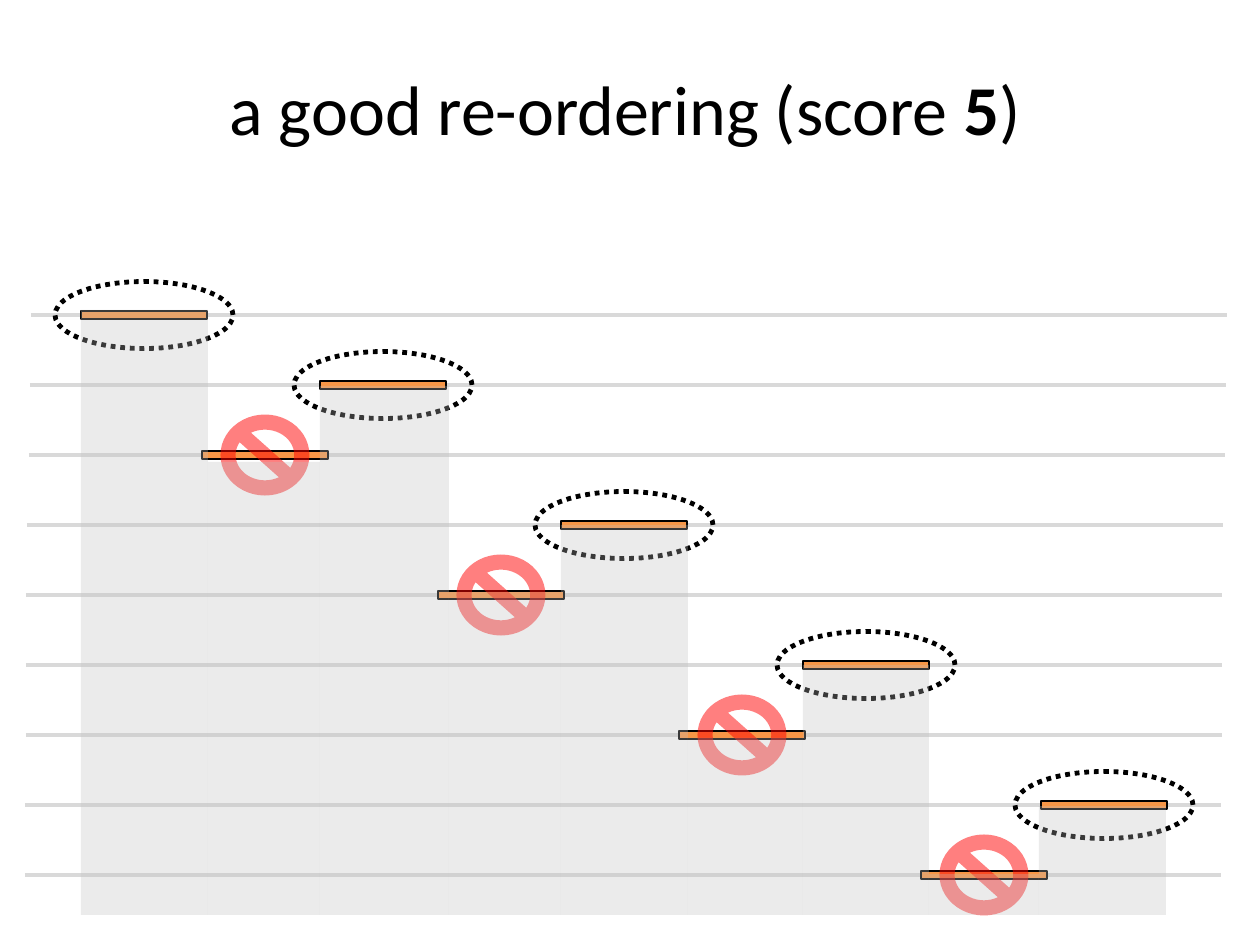
from lxml import etree
from pptx import Presentation, util as u
from pptx.dml.color import RGBColor
from pptx.enum import dml, shapes, text
from pptx.oxml.ns import qn

BLACK = RGBColor(0x00, 0x00, 0x00)
RULE_GREY = RGBColor(0xD9, 0xD9, 0xD9)
SHADE_GREY = RGBColor(0xBF, 0xBF, 0xBF)
ORANGE = RGBColor(0xF7, 0x96, 0x46)
RED = RGBColor(0xFF, 0x00, 0x00)

TITLE = [("a good re-ordering (score ", False), ("5", True), (")", False)]
TITLE_BOX = (84, 59, 1082, 158)

# One entry per level, top to bottom: rule left, bar left, chosen, shade (left, right, top)
LEVELS = [
    (31, 81, True, (81, 208, 310)),
    (30, 320, True, (320, 449, 386)),
    (29, 202, False, (208, 320, 462)),
    (27, 561, True, (561, 688, 525)),
    (26, 438, False, (449, 561, 592)),
    (26, 803, True, (803, 929, 665)),
    (26, 679, False, (688, 803, 738)),
    (25, 1041, True, (1039, 1166, 806)),
    (25, 921, False, (929, 1039, 874)),
]
FIRST_Y, PITCH, RULE_WIDTH = 315, 70, 1196
BAR_WIDTH, BAR_HEIGHT = 126, 8
RING_SIZE = (67, 178)
BAN_SIZE = (89, 81)
SHADE_BOTTOM = 915
SCALE = 914400 / 126


def px(*lengths):
    return [u.Emu(round(length * SCALE)) for length in lengths]


def set_line(line, color, width, dash=None):
    line.color.rgb = color
    line.width = u.Pt(width)
    if dash:
        line.dash_style = dash


def add_shape(page, kind, box, fill=None, opacity=100, line=None):
    """Add a shape; box is in px, opacity in percent, line is (color, width, dash)."""
    shape = page.shapes.add_shape(kind, *px(*box))
    shape.shadow.inherit = False
    if fill is None:
        shape.fill.background()
    else:
        shape.fill.solid()
        shape.fill.fore_color.rgb = fill
        if opacity < 100:
            color = shape.fill._xPr.find(qn("a:solidFill"))[0]
            etree.SubElement(color, qn("a:alpha"), val=str(opacity * 1000))
    if line:
        set_line(shape.line, *line)
    else:
        shape.line.fill.background()
    return shape


def centred(center_x, center_y, width, height):
    return center_x - width / 2, center_y - height / 2, width, height


def add_rule(page, left, y):
    rule = page.shapes.add_connector(
        shapes.MSO_CONNECTOR.STRAIGHT, *px(left, y, left + RULE_WIDTH, y))
    set_line(rule.line, RULE_GREY, 2)
    etree.SubElement(rule._element.spPr, qn("a:effectLst"))


def add_title(page):
    frame = page.shapes.add_textbox(*px(*TITLE_BOX)).text_frame
    frame.word_wrap = True
    para = frame.paragraphs[0]
    para.alignment = text.PP_ALIGN.CENTER
    for wording, bold in TITLE:
        span = para.add_run()
        span.text = wording
        span.font.color.rgb = BLACK
        for name, value in {"name": "Calibri", "size": u.Pt(40), "bold": bold}.items():
            setattr(span.font, name, value)


def main():
    deck = Presentation()
    deck.slide_width, deck.slide_height = u.Inches(10), u.Inches(7.5)
    page = deck.slides.add_slide(deck.slide_layouts[6])
    kinds = shapes.MSO_SHAPE
    rows = [(FIRST_Y + PITCH * i, *level) for i, level in enumerate(LEVELS)]

    add_title(page)
    for y, rule_left, *_ in rows:
        add_rule(page, rule_left, y)
    for y, _, bar_left, *_ in rows:
        add_shape(page, kinds.RECTANGLE, (bar_left, y - BAR_HEIGHT / 2, BAR_WIDTH, BAR_HEIGHT),
                  ORANGE, line=(BLACK, 0.75))
    for y, _, bar_left, chosen, _ in rows:
        center_x = bar_left + BAR_WIDTH / 2
        if chosen:
            ring = add_shape(page, kinds.OVAL, centred(center_x, y, *RING_SIZE),
                             line=(BLACK, 2.75, dml.MSO_LINE.ROUND_DOT))
            ring.rotation = 90
        else:
            add_shape(page, kinds.NO_SYMBOL, centred(center_x, y, *BAN_SIZE), RED, 50)
    for *_, (left, right, top) in rows:
        add_shape(page, kinds.RECTANGLE, (left, top, right - left, SHADE_BOTTOM - top),
                  SHADE_GREY, 30)
    deck.save("out.pptx")


if __name__ == "__main__":
    main()
